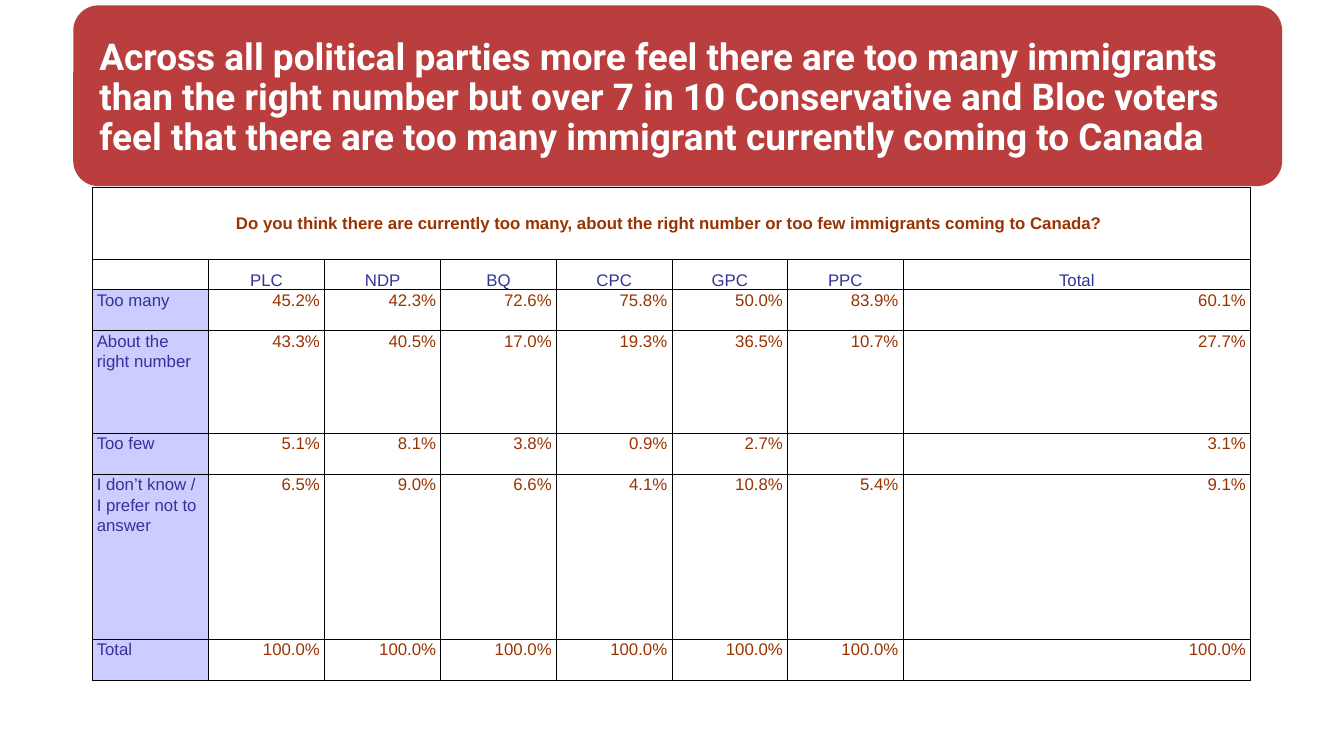
from lxml.etree import SubElement
from pptx import Presentation
from pptx.dml.color import RGBColor
from pptx.enum.shapes import MSO_SHAPE as Shape
from pptx.enum.text import MSO_ANCHOR as Anchor, PP_ALIGN as Align
from pptx.oxml.ns import qn
from pptx.util import Inches, Pt

TITLE = (
    "Across all political parties more feel there are too many immigrants "
    "than the right number but over 7 in 10 Conservative and Bloc voters "
    "feel that there are too many immigrant currently coming to Canada"
)
QUESTION = (
    "Do you think there are currently too many, about the right number "
    "or too few immigrants coming to Canada? "
)
PARTIES = ["", "PLC", "NDP", "BQ", "CPC", "GPC", "PPC", "Total"]
ANSWERS = [
    ["Too many", "45.2%", "42.3%", "72.6%", "75.8%", "50.0%", "83.9%", "60.1%"],
    ["About the right number", "43.3%", "40.5%", "17.0%", "19.3%", "36.5%", "10.7%", "27.7%"],
    ["Too few", "5.1%", "8.1%", "3.8%", "0.9%", "2.7%", "", "3.1%"],
    ["I don’t know / I prefer not to answer",
     "6.5%", "9.0%", "6.6%", "4.1%", "10.8%", "5.4%", "9.1%"],
    ["Total"] + ["100.0%"] * 7,
]
COLUMN_WIDTHS = [1.73] * 3 + [1.72] * 4 + [5.17]
ROW_HEIGHTS = [1.07, 0.45, 0.61, 1.53, 0.61, 2.45, 0.61]
RED, BROWN, BLUE, LILAC, WHITE, BLACK = (
    "BB3E3E", "993300", "333399", "CCCCFF", "FFFFFF", "000000")


def color(value):
    return RGBColor.from_string(value)


def write(frame, text, *, size=18, font="Arial", ink=BROWN, bold=False,
          align=Align.LEFT, spacing=1.07):
    paragraph = frame.paragraphs[0]
    paragraph.alignment = align
    paragraph.line_spacing = spacing
    if not text:
        return
    run = paragraph.add_run()
    run.text = text
    run.font.size = Pt(size)
    run.font.name = font
    run.font.bold = bold
    run.font.color.rgb = color(ink)


def add_borders(cell):
    properties = cell._tc.get_or_add_tcPr()
    for side in ("a:lnL", "a:lnR", "a:lnT", "a:lnB"):
        line = SubElement(properties, qn(side), w=str(Pt(1)))
        fill = SubElement(line, qn("a:solidFill"))
        SubElement(fill, qn("a:srgbClr"), val=BLACK)


def format_cell(cell, text, *, fill=None, anchor=Anchor.TOP, **text_format):
    add_borders(cell)
    if fill:
        cell.fill.solid()
        cell.fill.fore_color.rgb = color(fill)
    else:
        cell.fill.background()
    cell.margin_left = cell.margin_right = Inches(0.07)
    cell.margin_top = cell.margin_bottom = 0
    cell.vertical_anchor = anchor
    write(cell.text_frame, text, **text_format)


def add_title(slide):
    banner = slide.shapes.add_shape(
        Shape.ROUNDED_RECTANGLE, Inches(1.09), Inches(0.08), Inches(17.99), Inches(2.69))
    banner.adjustments[0] = 0.14
    banner.shadow.inherit = False
    banner.fill.solid()
    banner.fill.fore_color.rgb = color(RED)
    banner.line.fill.background()

    title = slide.shapes.add_textbox(
        Inches(1.38), Inches(0.37), Inches(17.25), Inches(2.18))
    frame = title.text_frame
    frame.word_wrap = True
    frame.vertical_anchor = Anchor.MIDDLE
    write(frame, TITLE, size=39.6, font="Roboto", ink=WHITE, bold=True, spacing=0.9)


def add_results(slide):
    table = slide.shapes.add_table(
        len(ROW_HEIGHTS), len(COLUMN_WIDTHS), Inches(1.37), Inches(2.79),
        Inches(sum(COLUMN_WIDTHS)), Inches(sum(ROW_HEIGHTS))).table
    table.first_row = table.horz_banding = False
    for column, width in zip(table.columns, COLUMN_WIDTHS):
        column.width = Inches(width)
    for row, height in zip(table.rows, ROW_HEIGHTS):
        row.height = Inches(height)

    question_row = [QUESTION] + [""] * (len(PARTIES) - 1)
    for index, text in enumerate(question_row):
        format_cell(table.cell(0, index), text, anchor=Anchor.MIDDLE,
                    bold=True, align=Align.CENTER)
    table.cell(0, 0).merge(table.cell(0, len(PARTIES) - 1))

    for index, party in enumerate(PARTIES):
        format_cell(table.cell(1, index), party, anchor=Anchor.BOTTOM,
                    ink=BLUE, align=Align.CENTER)
    for row, (answer, *shares) in enumerate(ANSWERS, start=2):
        format_cell(table.cell(row, 0), answer, fill=LILAC, ink=BLUE)
        for index, share in enumerate(shares, start=1):
            format_cell(table.cell(row, index), share, fill=WHITE, align=Align.RIGHT)


def main():
    presentation = Presentation()
    presentation.slide_width = Inches(20)
    presentation.slide_height = Inches(11.25)
    slide = presentation.slides.add_slide(presentation.slide_layouts[6])
    add_title(slide)
    add_results(slide)
    presentation.save("out.pptx")


if __name__ == "__main__":
    main()
